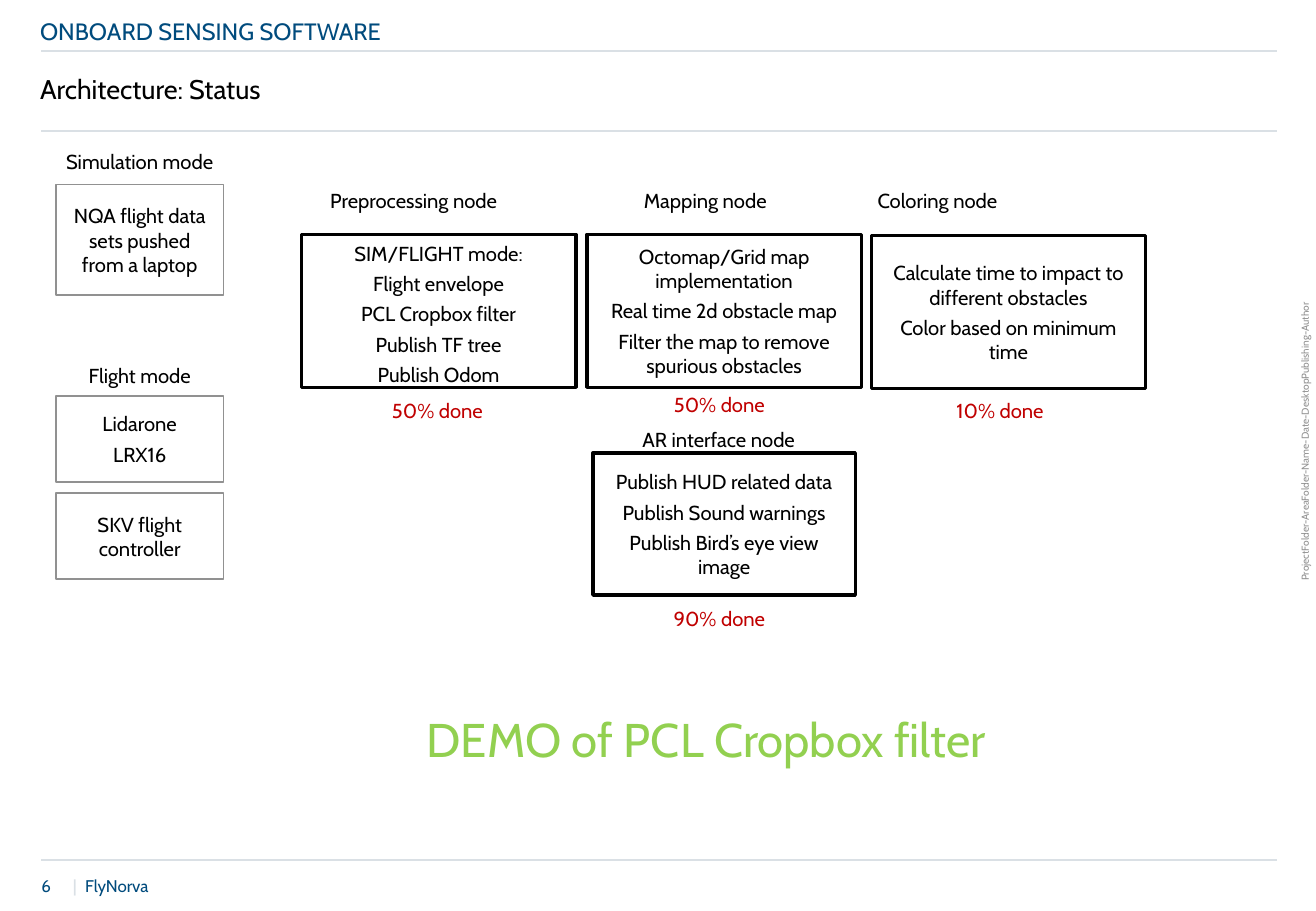
from dataclasses import dataclass

from pptx import Presentation
from pptx.dml.color import RGBColor
from pptx.enum.shapes import MSO_CONNECTOR, MSO_SHAPE
from pptx.enum.text import MSO_ANCHOR, PP_ALIGN
from pptx.oxml.ns import qn
from pptx.util import Inches, Pt
from lxml.etree import SubElement


@dataclass(frozen=True)
class Theme:
    font: str = "Cabin"
    black: str = "000000"
    white: str = "FFFFFF"
    blue: str = "004B7D"
    grey: str = "919191"
    rule: str = "DAE0E5"
    red: str = "C00000"
    green: str = "92D050"
    path_size: float = 6
    footer_size: float = 10
    body_size: float = 12
    header_size: float = 14
    title_size: float = 16
    demo_size: float = 28
    paragraph_gap: float = 3.6


theme = Theme()
presentation = Presentation()
presentation.slide_width = Inches(10.83)
presentation.slide_height = Inches(7.5)
slide = presentation.slides.add_slide(presentation.slide_layouts[6])


def write_text(shape, lines, size=theme.body_size, color=theme.black,
               align=PP_ALIGN.CENTER, anchor=MSO_ANCHOR.TOP,
               insets=(0, 0, 0, 0), spacing=1.0, bold=False):
    frame = shape.text_frame
    left, top, right, bottom = map(Inches, insets)
    frame_format = {"word_wrap": True, "vertical_anchor": anchor,
                    "margin_left": left, "margin_top": top,
                    "margin_right": right, "margin_bottom": bottom}
    for name, value in frame_format.items():
        setattr(frame, name, value)
    for index, line in enumerate(lines):
        paragraph = frame.add_paragraph() if index else frame.paragraphs[0]
        paragraph.text = line
        paragraph_format = {
            "alignment": align, "line_spacing": spacing,
            "space_before": Pt(theme.paragraph_gap if index else 0)}
        for name, value in paragraph_format.items():
            setattr(paragraph, name, value)
        font = paragraph.runs[0].font
        for name, value in {"name": theme.font, "size": Pt(size), "bold": bold}.items():
            setattr(font, name, value)
        font.color.rgb = RGBColor.from_string(color)


def add_label(box, text, **text_format):
    label = slide.shapes.add_textbox(*map(Inches, box))
    write_text(label, [text], **text_format)
    return label


# Horizontal rules
for y in (0.42, 1.08, 7.08):
    rule = slide.shapes.add_connector(
        MSO_CONNECTOR.STRAIGHT, Inches(0.34), Inches(y), Inches(10.51), Inches(y))
    rule.line.color.rgb = RGBColor.from_string(theme.rule)
    rule.line.width = Pt(1)
    SubElement(rule._element.spPr, qn("a:effectLst"))

# Header and title
heading = {"align": PP_ALIGN.LEFT, "anchor": MSO_ANCHOR.MIDDLE,
           "insets": (0, 0.04, 0, 0.04)}
add_label((0.33, 0.09, 10.17, 0.33), "ONBOARD SENSING SOFTWARE",
          size=theme.header_size, color=theme.blue, **heading)
add_label((0.33, 0.59, 10.17, 0.32), "Architecture: Status",
          size=theme.title_size, spacing=0.9, **heading)

# Footer and folder path on the right edge
footer = {"size": theme.footer_size, "align": PP_ALIGN.LEFT,
          "insets": (0, 0.05, 0, 0.05), "spacing": 0.9}
for left, width, text, color, bold in (
        (0.34, 0.25, "6", theme.blue, False),
        (0.6, 0.08, "|", theme.rule, True),
        (0.7, 0.9, "FlyNorva", theme.blue, False)):
    add_label((left, 7.18, width, 0.25), text, color=color, bold=bold, **footer)
folder_path = add_label(
    (9.45, 3.54, 2.59, 0.19),
    "ProjectFolder-AreaFolder-Name-Date-DesktopPublishing-Author",
    size=theme.path_size, color=theme.grey, spacing=0.9,
    insets=(0, 0.05, 0, 0.05))
folder_path.rotation = 270

# Node and input boxes
node = (theme.black, 2)
source = (theme.grey, 1)
box_insets = (0.1, 0.05, 0.1, 0.05)
boxes = (
    ((2.48, 1.93, 2.26, 1.26), node, (0.1, 0.05, 0.1, 0),
     ["SIM/FLIGHT mode:", "Flight envelope", "PCL Cropbox filter",
      "Publish TF tree", "Publish Odom"]),
    ((4.83, 1.93, 2.26, 1.26), node, box_insets,
     ["Octomap/Grid map implementation", "Real time 2d obstacle map",
      "Filter the map to remove spurious obstacles"]),
    ((7.17, 1.94, 2.26, 1.26), node, box_insets,
     ["Calculate time to impact to different obstacles",
      "Color based on minimum time"]),
    ((4.88, 3.73, 2.16, 1.17), node, box_insets,
     ["Publish HUD related data", "Publish Sound warnings",
      "Publish Bird’s eye view image"]),
    ((0.46, 1.52, 1.38, 0.91), source, box_insets,
     ["NQA flight data sets pushed from a laptop"]),
    ((0.46, 3.26, 1.38, 0.71), source, box_insets, ["Lidarone", "LRX16"]),
    ((0.46, 4.06, 1.38, 0.71), source, box_insets, ["SKV flight controller"]),
)
for box, (line_color, line_width), insets, lines in boxes:
    shape = slide.shapes.add_shape(MSO_SHAPE.RECTANGLE, *map(Inches, box))
    shape.shadow.inherit = False
    shape.fill.solid()
    shape.fill.fore_color.rgb = RGBColor.from_string(theme.white)
    shape.line.color.rgb = RGBColor.from_string(line_color)
    shape.line.width = Pt(line_width)
    write_text(shape, lines, anchor=MSO_ANCHOR.MIDDLE, insets=insets)

# Captions above the boxes and progress below them
captions = (
    (2.48, 1.55, 1.85, "Preprocessing node", theme.black),
    (4.88, 1.55, 1.85, "Mapping node", theme.black),
    (6.79, 1.55, 1.85, "Coloring node", theme.black),
    (4.99, 3.52, 1.85, "AR interface node", theme.black),
    (0.46, 1.23, 1.38, "Simulation mode", theme.black),
    (0.46, 2.99, 1.38, "Flight mode", theme.black),
    (2.91, 3.28, 1.38, "50% done", theme.red),
    (5.23, 3.23, 1.38, "50% done", theme.red),
    (7.54, 3.28, 1.38, "10% done", theme.red),
    (5.23, 4.99, 1.38, "90% done", theme.red),
)
for left, top, width, text, color in captions:
    add_label((left, top, width, 0.2), text, color=color)

# Demo announcement
add_label((0.97, 5.85, 9.68, 0.47), "DEMO of PCL Cropbox filter",
          size=theme.demo_size, color=theme.green)

presentation.save("out.pptx")
